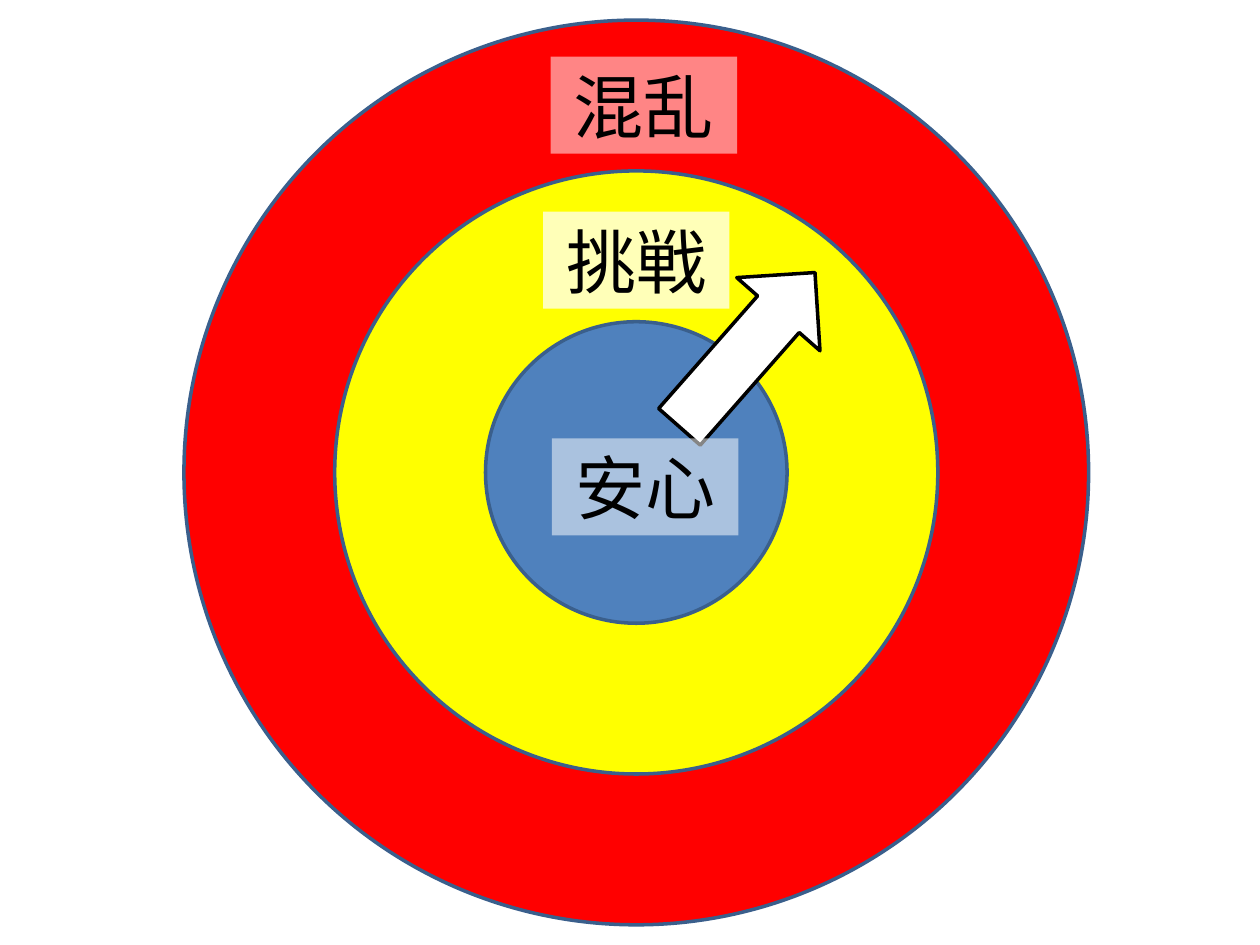
from lxml import etree
from pptx import Presentation
from pptx.dml.color import RGBColor
from pptx.enum.shapes import MSO_SHAPE
from pptx.enum.text import MSO_ANCHOR, PP_ALIGN
from pptx.oxml.ns import qn
from pptx.util import Inches, Pt

OVAL, ARROW = MSO_SHAPE.OVAL, MSO_SHAPE.DOWN_ARROW
MIDDLE, CENTER = MSO_ANCHOR.MIDDLE, PP_ALIGN.CENTER
FONT = "Noto Sans CJK JP"
COLORS = {
    "panic": "FF0000",
    "stretch": "FFFF00",
    "comfort": "4F81BD",
    "edge": "3A5F8C",
    "white": "FFFFFF",
    "black": "000000",
}
ZONES = ("panic", "stretch", "comfort")


def color(name):
    return RGBColor.from_string(COLORS[name])


def place(box, left, top, width, height):
    """Turn shares of a box into a left, top, width and height."""
    x, y, w, h = box
    return (int(x + left * w), int(y + top * h),
            int(width * w), int(height * h))


def add_form(shapes, kind, box, fill, edge):
    form = shapes.add_shape(kind, *box)
    form.shadow.inherit = False
    form.fill.solid()
    form.fill.fore_color.rgb = color(fill)
    form.line.color.rgb = color(edge)
    form.line.width = Pt(2)
    return form


def add_target(slide, box):
    """Draw the concentric zones and the arrow that leads outwards."""
    shapes = slide.shapes.add_group_shape().shapes
    count = len(ZONES)
    for ring, zone in enumerate(ZONES):
        inset = ring / count / 2
        size = 1 - 2 * inset
        add_form(shapes, OVAL, place(box, inset, inset, size, size),
                 zone, "edge")
    spot = place(box, 4.03 / 7.18, 1.8 / 7.18, 0.88 / 7.18, 1.63 / 7.18)
    arrow = add_form(shapes, ARROW, spot, "white", "black")
    arrow.rotation = 221.3


def add_label(slide, box, text, alpha):
    """Add a white label whose opacity is alpha percent."""
    label = slide.shapes.add_textbox(*box)
    label.fill.solid()
    label.fill.fore_color.rgb = color("white")
    tint = label.fill._xPr.find(qn("a:solidFill"))[0]
    etree.SubElement(tint, qn("a:alpha"), val=str(alpha * 1000))
    frame = label.text_frame
    frame.word_wrap = True
    frame.vertical_anchor = MIDDLE
    frame.text = text
    line = frame.paragraphs[0]
    line.alignment = CENTER
    run = line.runs[0]
    run.font.size = Pt(40)
    run.font.name = FONT
    run.font.color.rgb = color("black")
    etree.SubElement(run.font._element, qn("a:ea"), typeface=FONT)


def main():
    deck = Presentation()
    deck.slide_width, deck.slide_height = Inches(10), Inches(7.5)
    slide = deck.slides.add_slide(deck.slide_layouts[6])
    page = (0, 0, deck.slide_width, deck.slide_height)
    add_target(slide, place(page, 0.146, 0.16 / 7.5, 0.718, 7.18 / 7.5))
    labels = (
        ("挑戦", 0.431, 1.68 / 7.5, 72),
        ("安心", 0.438, 3.48 / 7.5, 52),
        ("混乱", 0.437, 0.45 / 7.5, 52),
    )
    for text, left, top, alpha in labels:
        box = place(page, left, top, 0.148, 0.77 / 7.5)
        add_label(slide, box, text, alpha)
    deck.save("out.pptx")


if __name__ == "__main__":
    main()
